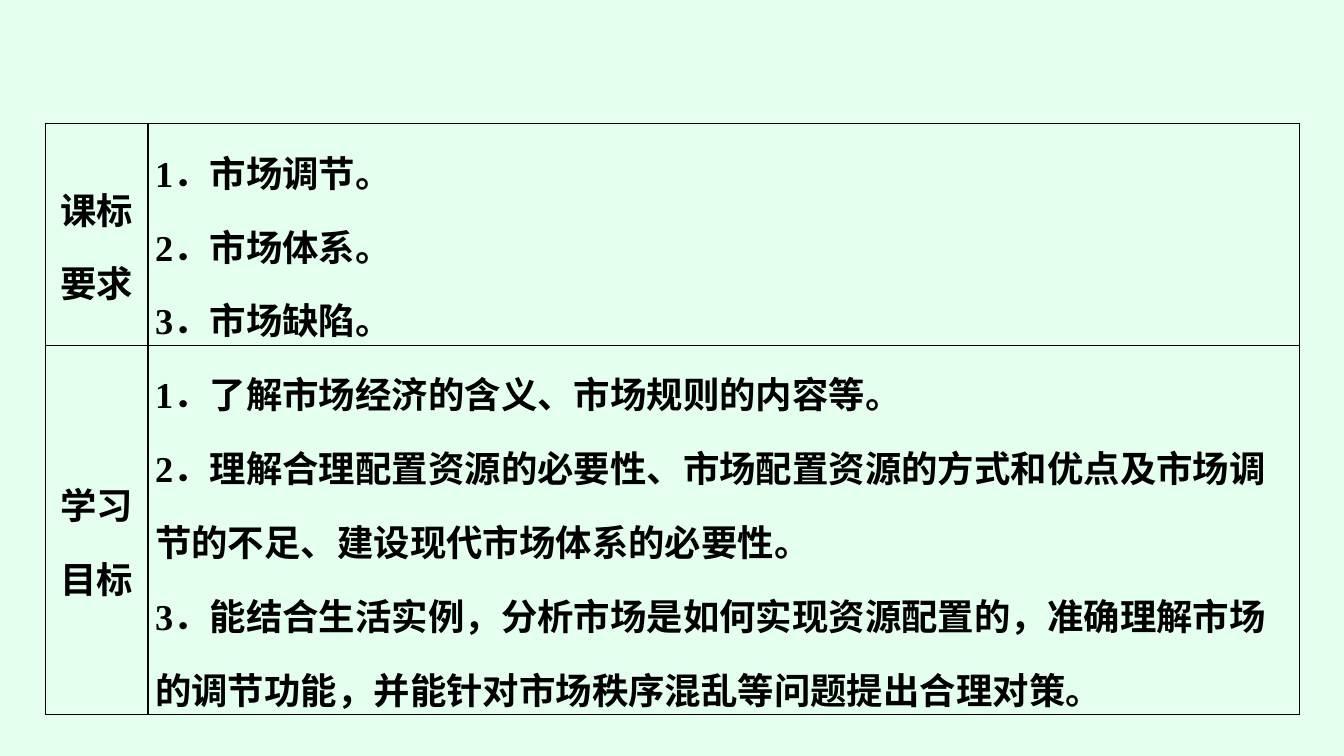
from lxml import etree
from pptx import Presentation
from pptx import util as u
from pptx.dml.color import RGBColor
from pptx.enum import text
from pptx.oxml import ns

MINT = RGBColor(0xE4, 0xFF, 0xEE)
BLACK = RGBColor(0, 0, 0)

GOALS = [
    ("课标要求", ["1．市场调节。", "2．市场体系。", "3．市场缺陷。"]),
    ("学习目标", [
        "1．了解市场经济的含义、市场规则的内容等。",
        "2．理解合理配置资源的必要性、市场配置资源的方式和优点及市场调节的不足、建设现代市场体系的必要性。",
        "3．能结合生活实例，分析市场是如何实现资源配置的，准确理解市场的调节功能，并能针对市场秩序混乱等问题提出合理对策。",
    ]),
]
COLUMN_WIDTHS = [2.59, 29.01]
ROW_HEIGHTS = [4.62, 7.7]


def add_borders(cell):
    properties = cell._tc.get_or_add_tcPr()
    for position, side in enumerate(("lnL", "lnR", "lnT", "lnB")):
        line = etree.Element(ns.qn(f"a:{side}"), w=str(u.Pt(1)))
        fill = etree.SubElement(line, ns.qn("a:solidFill"))
        etree.SubElement(fill, ns.qn("a:srgbClr"), val=str(BLACK))
        properties.insert(position, line)


def fill_cell(cell, lines, alignment):
    cell.fill.background()
    cell.vertical_anchor = text.MSO_ANCHOR.MIDDLE
    cell.margin_left = cell.margin_right = u.Cm(0.18)
    cell.margin_top = cell.margin_bottom = 0
    cell.text = "\n".join(lines)
    for paragraph in cell.text_frame.paragraphs:
        paragraph.alignment = alignment
        paragraph.line_spacing = 1.4
        paragraph.font.name = "Times New Roman"
        paragraph.font.size = u.Pt(26)
        paragraph.font.bold = True
        paragraph.font.color.rgb = BLACK
    add_borders(cell)


# Slide and background
presentation = Presentation()
presentation.slide_width = u.Cm(33.87)
presentation.slide_height = u.Cm(19.05)
slide = presentation.slides.add_slide(presentation.slide_layouts[6])
slide.background.fill.solid()
slide.background.fill.fore_color.rgb = MINT

# Table of requirements and goals
goals = slide.shapes.add_table(
    len(GOALS), 2, u.Cm(1.14), u.Cm(3.12),
    u.Cm(sum(COLUMN_WIDTHS)), u.Cm(sum(ROW_HEIGHTS))).table
goals.first_row = False
goals.horz_banding = False
for column, width in zip(goals.columns, COLUMN_WIDTHS):
    column.width = u.Cm(width)
for row, height in zip(goals.rows, ROW_HEIGHTS):
    row.height = u.Cm(height)

# Headings on the left, numbered points on the right
for row, (heading, points) in zip(goals.rows, GOALS):
    fill_cell(row.cells[0], [heading], text.PP_ALIGN.CENTER)
    fill_cell(row.cells[1], points, text.PP_ALIGN.LEFT)

presentation.save("out.pptx")
